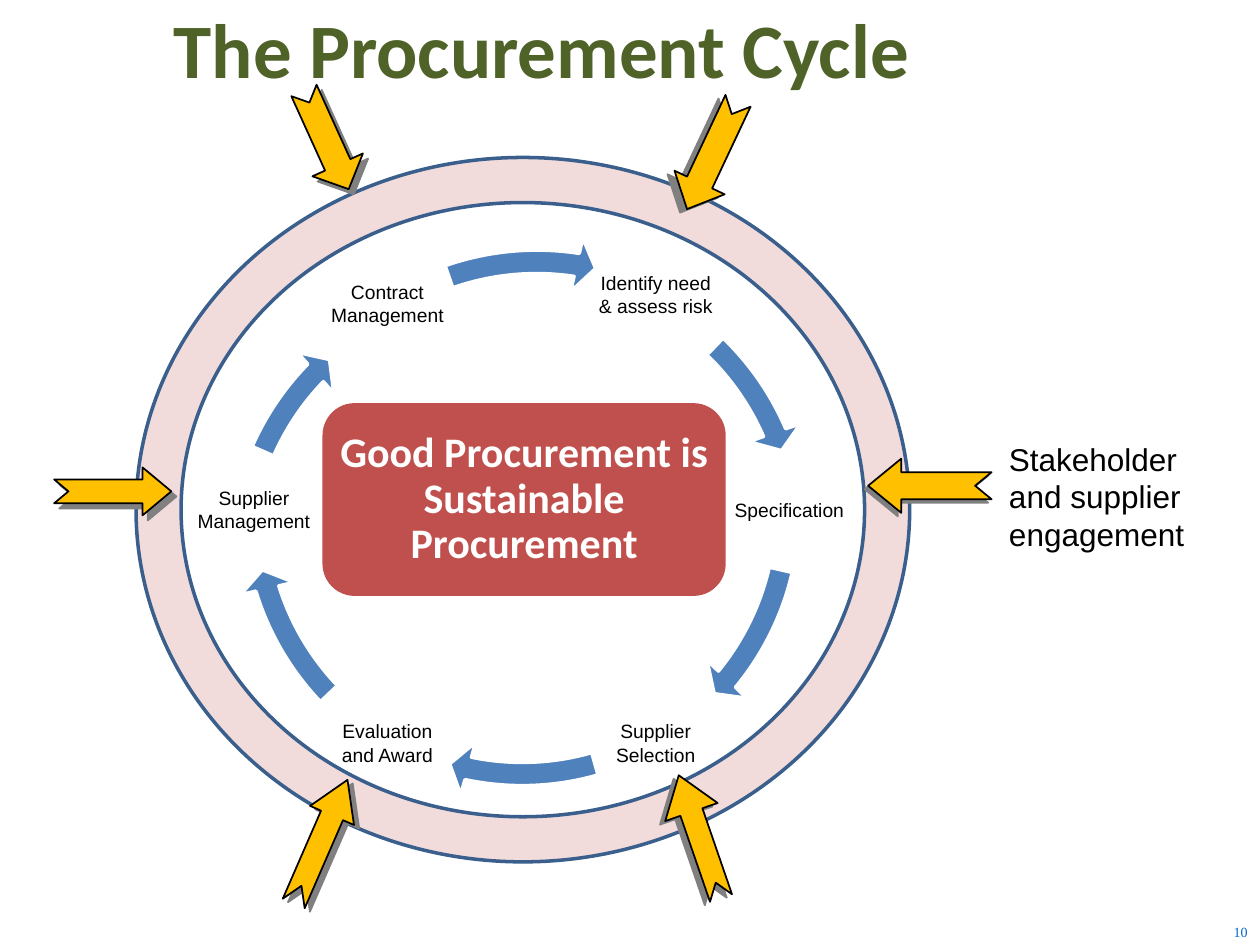
from lxml import etree
from pptx import Presentation
from pptx.dml.color import RGBColor
from pptx.enum.shapes import MSO_SHAPE
from pptx.enum.text import MSO_ANCHOR, PP_ALIGN
from pptx.oxml.ns import qn
from pptx.util import Inches, Pt

CENTER, RIGHT, LEFT = PP_ALIGN.CENTER, PP_ALIGN.RIGHT, PP_ALIGN.LEFT
MIDDLE, TOP = MSO_ANCHOR.MIDDLE, MSO_ANCHOR.TOP
TITLE_ONLY = 5


def add_figure(kind, place, fill, line=None, line_width=1):
    figure = slide.shapes.add_shape(kind, *map(Inches, place))
    figure.shadow.inherit = False
    figure.fill.solid()
    figure.fill.fore_color.rgb = RGBColor.from_string(fill)
    if line:
        figure.line.color.rgb = RGBColor.from_string(line)
        figure.line.width = Pt(line_width)
    else:
        figure.line.fill.background()
    return figure


def write(box, lines, font, size, color, align=CENTER, anchor=MIDDLE,
          inset=None, bold=False):
    frame = box.text_frame
    frame.word_wrap = True
    frame.vertical_anchor = anchor
    if inset is not None:
        frame.margin_left = frame.margin_right = Inches(inset)
        frame.margin_top = frame.margin_bottom = Inches(inset)
    frame.text = "\n".join(lines)
    for para in frame.paragraphs:
        para.alignment = align
        para.font.name = font
        para.font.size = Pt(size)
        para.font.bold = bold
        para.font.color.rgb = RGBColor.from_string(color)


deck = Presentation()
deck.slide_width, deck.slide_height = Inches(10), Inches(7.5)
slide = deck.slides.add_slide(deck.slide_layouts[TITLE_ONLY])

# Title and page number
title = slide.shapes.title
title.left, title.top = Inches(-0.2), Inches(0)
title.width, title.height = Inches(9), Inches(0.76)
write(title, ["The Procurement Cycle"], "Calibri", 44, "4F6228", bold=True)

page_number = slide.shapes.add_textbox(
    Inches(8.07), Inches(7.29), Inches(1.93), Inches(0.21))
write(page_number, ["10"], "Times New Roman", 8, "0066CC", align=RIGHT)

# Outer ring
ring = add_figure(MSO_SHAPE.DONUT, (1.08, 1.25, 6.14, 5.59), "F2DCDB", "3A5F8C", 2)
ring.adjustments[0] = 6.4 / 100

# Stages: label, its left and top, then the arrow to the next stage
# (left, top, size, start angle and end angle in degrees)
stages = [
    ("Identify need & assess risk", 4.73, 1.86, 1.88, 1.94, 4.66, 313.95, 336.67),
    ("Specification", 5.79, 3.57, 1.81, 1.72, 4.66, 12.95, 39.44),
    ("Supplier Selection", 4.73, 5.42, 1.84, 1.75, 4.61, 73.98, 101.85),
    ("Evaluation and Award", 2.6, 5.42, 1.81, 1.72, 4.66, 136.39, 162.88),
    ("Supplier Management", 1.54, 3.57, 1.69, 2.1, 4.66, 203.69, 224.13),
    ("Contract Management", 2.6, 1.93, 1.93, 1.86, 4.66, 250.74, 278.65),
]
HEAD_ANGLE = 4.17
DEGREE = 0.6  # one degree in adjustment units
for name, left, top, arc_left, arc_top, size, start, end in stages:
    label = slide.shapes.add_textbox(
        Inches(left), Inches(top), Inches(0.95), Inches(0.95))
    write(label, [name], "Arial", 11, "000000", inset=0.02)
    arc = add_figure(MSO_SHAPE.CIRCULAR_ARROW, (arc_left, arc_top, size, size),
                     "4F81BD", "FFFFFF", 2)
    settings = (0.04, HEAD_ANGLE * DEGREE, end * DEGREE, start * DEGREE, 4.7 / 100)
    for index, value in enumerate(settings):
        arc.adjustments[index] = value

# Central message
message = add_figure(MSO_SHAPE.ROUNDED_RECTANGLE, (2.56, 3.2, 3.2, 1.53), "C0504D")
write(message, ["Good Procurement is Sustainable Procurement"], "Calibri", 24,
      "FFFFFF", inset=0.06, bold=True)
message.text_frame.paragraphs[0].line_spacing = 0.9

# Engagement arrows: place, rotation, shaft, head, shadow distance and direction
engagement_arrows = [
    ((0.43, 3.71, 0.93, 0.38), 0, 0.5, 0.6, 4.2, 45),
    ((2.16, 0.89, 0.86, 0.44), 65.6, 0.5, 0.48, 4.2, 45),
    ((5.18, 1.01, 0.95, 0.44), 115.2, 0.5, 0.53, 4.5, 153),
    ((6.89, 3.64, 0.98, 0.43), 180, 0.5, 0.61, 2.8, 135),
    ((5.04, 6.42, 1.03, 0.44), 251, 0.42, 0.7, 3.6, 146),
    ((2.01, 6.49, 1.07, 0.38), 293.5, 0.5, 0.81, 3.6, 34),
]
for place, rotation, shaft, head, distance, direction in engagement_arrows:
    arrow = add_figure(MSO_SHAPE.NOTCHED_RIGHT_ARROW, place, "FFC000", "000000")
    arrow.rotation = rotation
    arrow.adjustments[0], arrow.adjustments[1] = shaft, head
    effects = arrow._element.spPr.find(qn("a:effectLst"))
    shadow = etree.SubElement(
        effects, qn("a:outerShdw"), dist=str(Pt(distance)),
        dir=str(direction * 60000), algn="ctr", rotWithShape="0")
    etree.SubElement(shadow, qn("a:srgbClr"), val="808080")

# Side note
note = slide.shapes.add_textbox(
    Inches(7.91), Inches(3.44), Inches(2.26), Inches(1.01))
write(note, ["Stakeholder", "and supplier engagement"], "Arial", 18, "000000",
      align=LEFT, anchor=TOP)

deck.save("out.pptx")
